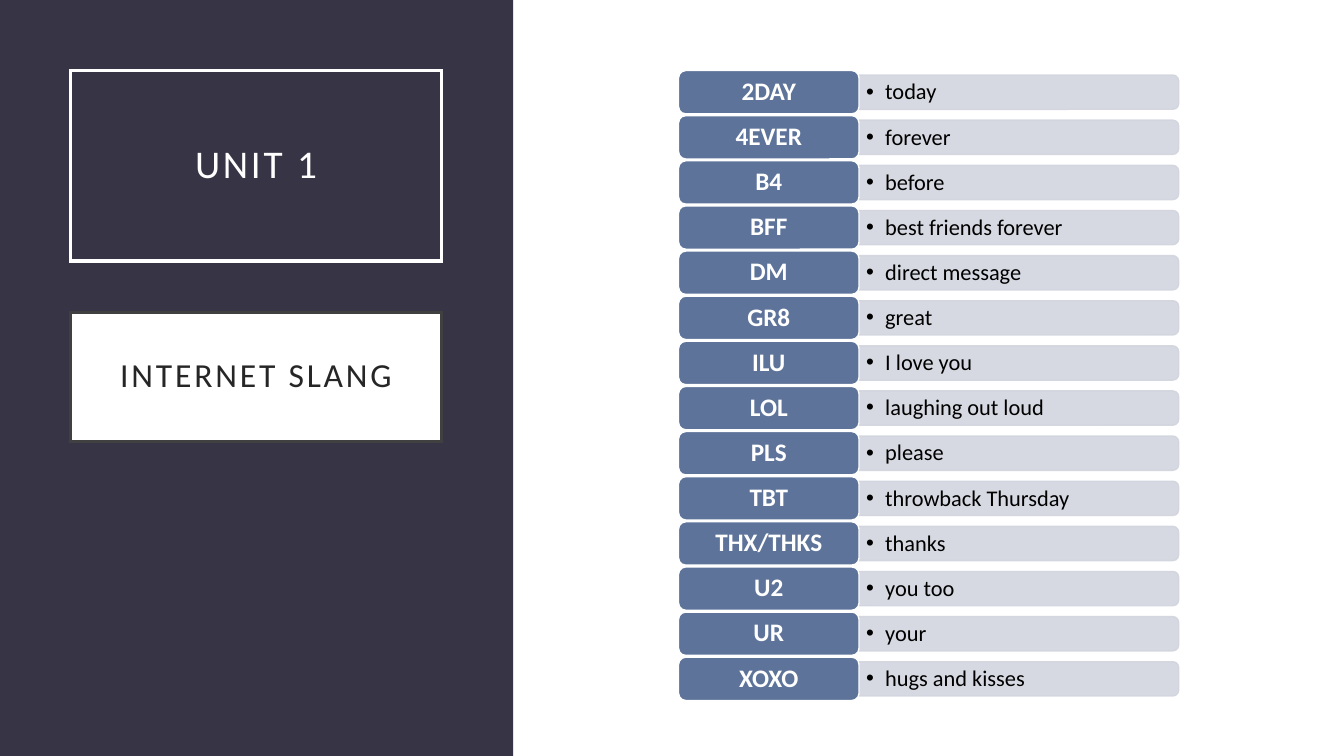
from lxml.etree import SubElement
from pptx import Presentation
from pptx.dml.color import RGBColor
from pptx.enum.shapes import MSO_SHAPE
from pptx.enum.text import MSO_ANCHOR, MSO_AUTO_SIZE, PP_ALIGN
from pptx.oxml.ns import qn
from pptx.util import Emu, Pt

PX = 9144  # 100 px to the inch
FONT = "Calibri"
COLORS = {
    "panel": "373545",
    "white": "FFFFFF",
    "frame": "404040",
    "dark": "262626",
    "bar": "D2D5DE",
    "key": "5D739A",
    "black": "000000",
}
SLANG = [
    ("2DAY", "today"),
    ("4EVER", "forever"),
    ("B4", "before"),
    ("BFF", "best friends forever"),
    ("DM", "direct message"),
    ("GR8", "great"),
    ("ILU", "I love you"),
    ("LOL", "laughing out loud"),
    ("PLS", "please"),
    ("TBT", "throwback Thursday"),
    ("THX/THKS", "thanks"),
    ("U2", "you too"),
    ("UR", "your"),
    ("XOXO", "hugs and kisses"),
]


def px(length):
    return Emu(round(length * PX))


def color(name):
    return RGBColor.from_string(COLORS[name])


def place(shape, left, top, width, height):
    box = {"left": left, "top": top, "width": width, "height": height}
    for name, length in box.items():
        setattr(shape, name, px(length))


def add_box(slide, kind, box, fill, line=None, line_width=1):
    shape = slide.shapes.add_shape(kind, *map(px, box))
    shape.shadow.inherit = False
    shape.fill.solid()
    shape.fill.fore_color.rgb = color(fill)
    if line:
        outline(shape, line, line_width)
    else:
        shape.line.fill.background()
    return shape


def outline(shape, line, width):
    shape.line.color.rgb = color(line)
    shape.line.width = Pt(width)


def write(shape, text, size, text_color, inset, align=PP_ALIGN.CENTER, bold=False):
    """Set one formatted paragraph; inset is (horizontal, vertical) in px."""
    across, down = map(px, inset)
    frame = shape.text_frame
    frame.text = text
    frame_format = {
        "word_wrap": True,
        "auto_size": MSO_AUTO_SIZE.NONE,
        "vertical_anchor": MSO_ANCHOR.MIDDLE,
        "margin_left": across,
        "margin_right": across,
        "margin_top": down,
        "margin_bottom": down,
    }
    for name, value in frame_format.items():
        setattr(frame, name, value)
    paragraph = frame.paragraphs[0]
    paragraph.alignment = align
    paragraph.line_spacing = 0.9
    font = paragraph.runs[0].font
    for name, value in {"name": FONT, "size": Pt(size), "bold": bold}.items():
        setattr(font, name, value)
    font.color.rgb = color(text_color)


def style_heading(shape, text, size, text_color, line):
    """Give a framed heading wide letter spacing and square corners."""
    outline(shape, line, 2.5)
    write(shape, text, size, text_color, (20, 20))
    for line_properties in shape.element.xpath(".//a:ln"):
        SubElement(line_properties, qn("a:miter"), lim="800000")
    for run_properties in shape.element.xpath(".//a:rPr"):
        run_properties.set("spc", "200")


def add_side_panel(slide, left, top, width, height):
    panel = add_box(slide, MSO_SHAPE.RECTANGLE, (left, top, width, height), "panel")
    title = slide.shapes.title
    title.element.addprevious(panel.element)
    margin = 70
    heading_width = width - 2 * margin - 1
    place(title, left + margin, top + margin, heading_width, 189)
    style_heading(title, "UNIT 1", 28, "white", "white")
    topic_box = (left + margin, top + 310, heading_width, 128)
    topic = add_box(slide, MSO_SHAPE.RECTANGLE, topic_box, "white")
    style_heading(topic, "INTERNET SLANG", 24, "dark", "frame")


def add_meaning(slide, text, left, top, width, height):
    # The bar stands upright and is turned so its round end faces right.
    upright = (left + (width - height) / 2, top - (width - height) / 2, height, width)
    bar = add_box(slide, MSO_SHAPE.ROUND_2_SAME_RECTANGLE, upright, "bar", "bar")
    bar.rotation = 90
    for bar_color in bar.element.xpath("./p:spPr//a:srgbClr"):
        SubElement(bar_color, qn("a:alpha"), val="90000")

    label = slide.shapes.add_textbox(px(left + 1), px(top + 2), px(width - 2), px(height - 3))
    write(label, text, 16, "black", (7, 3), PP_ALIGN.LEFT)
    for properties in label.element.xpath(".//a:pPr"):
        properties.set("marL", str(px(19)))
        properties.set("indent", str(-px(19)))
        SubElement(properties, qn("a:buFont"), typeface="Arial")
        SubElement(properties, qn("a:buChar"), char="•")


def add_slang_list(slide, left, top, width, height):
    key_width, key_height, bar_height = 179, 43, 34
    pitch = (height - key_height) / (len(SLANG) - 1)
    for row, (term, meaning) in enumerate(SLANG):
        row_top = top + row * pitch
        bar_top = row_top + (key_height - bar_height) / 2
        add_meaning(slide, meaning, left + key_width - 1, bar_top,
                    width - key_width + 1, bar_height)
        key_box = (left, row_top, key_width, key_height)
        key = add_box(slide, MSO_SHAPE.ROUNDED_RECTANGLE, key_box, "key", "white")
        write(key, term, 18, "white", (7, 4), bold=True)


def main():
    presentation = Presentation()
    presentation.slide_width = px(1333)
    presentation.slide_height = px(750)
    title_only = presentation.slide_layouts[5]
    slide = presentation.slides.add_slide(title_only)
    add_side_panel(slide, 0, 0, 509, 750)
    add_slang_list(slide, 673, 70, 496, 625)
    presentation.save("out.pptx")


if __name__ == "__main__":
    main()
